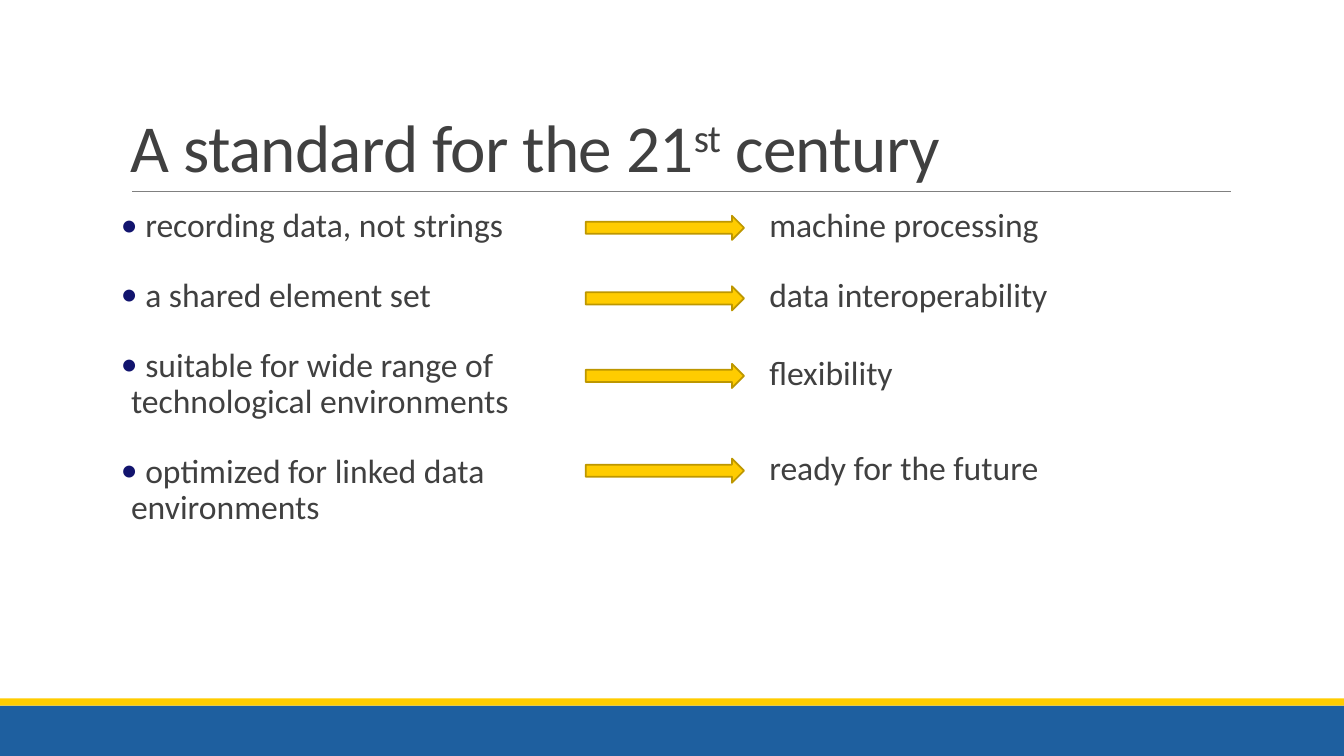
from dataclasses import dataclass

from lxml.etree import SubElement
from pptx import Presentation
from pptx.dml.color import RGBColor
from pptx.enum.shapes import MSO_CONNECTOR as Connector, MSO_SHAPE as Shape
from pptx.enum.text import MSO_ANCHOR as Anchor
from pptx.oxml.ns import qn
from pptx.slide import Slide
from pptx.text.text import TextFrame, _Paragraph as Paragraph
from pptx.util import Inches, Pt

COLORS = {
    "text": "404040",
    "bullet": "12146E",
    "rule": "808080",
    "blue": "1E5F9F",
    "gold": "FFCC00",
    "gold_edge": "BD9700",
}
FONT = "Calibri"


@dataclass
class Benefit:
    feature: str
    outcome: str
    arrow_top: float
    outcome_gap: float  # points after the outcome


BENEFITS = [
    Benefit("recording data, not strings", "machine processing", 2.14, 12),
    Benefit("a shared element set", "data interoperability", 2.84, 18),
    Benefit("suitable for wide range of technological environments",
            "flexibility", 3.61, 30),
    Benefit("optimized for linked data environments",
            "ready for the future", 4.55, 30),
]


def color(name: str) -> RGBColor:
    return RGBColor.from_string(COLORS[name])


def add_run(paragraph: Paragraph, text: str, *, size: float = 24,
            spacing: int = 0, baseline: int = 0) -> None:
    run = paragraph.add_run()
    run.text = text
    run.font.name = FONT
    run.font.size = Pt(size)
    run.font.color.rgb = color("text")
    properties = run.font._element
    if spacing:
        properties.set("spc", str(spacing))
    if baseline:
        properties.set("baseline", str(baseline))


def add_frame(slide: Slide, left: float, top: float, width: float,
              height: float, side_inset: float = 0) -> TextFrame:
    frame = slide.shapes.add_textbox(
        Inches(left), Inches(top), Inches(width), Inches(height)).text_frame
    frame.word_wrap = True
    frame.margin_left = frame.margin_right = Inches(side_inset)
    return frame


def add_column(slide: Slide, left: float, entries: list[tuple[str, float]],
               margin: float, bulleted: bool = False) -> None:
    frame = add_frame(slide, left, 2.02, 5.4, 4.4)
    for index, (text, gap) in enumerate(entries):
        paragraph = frame.add_paragraph() if index else frame.paragraphs[0]
        paragraph.line_spacing = 0.9
        paragraph.space_before = Pt(12)
        paragraph.space_after = Pt(gap)
        properties = paragraph._p.get_or_add_pPr()
        properties.set("marL", str(Inches(margin)))
        if bulleted:
            properties.set("indent", str(-Inches(margin)))
            bullet_color = SubElement(properties, qn("a:buClr"))
            SubElement(bullet_color, qn("a:srgbClr"), val=COLORS["bullet"])
            SubElement(properties, qn("a:buFont"), typeface=FONT)
            SubElement(properties, qn("a:buChar"), char="•")
        add_run(paragraph, text)


def add_block(slide: Slide, kind: Shape, left: float, top: float, width: float,
              height: float, fill: str, edge: str = "") -> None:
    block = slide.shapes.add_shape(
        kind, Inches(left), Inches(top), Inches(width), Inches(height))
    block.shadow.inherit = False
    block.fill.solid()
    block.fill.fore_color.rgb = color(fill)
    if edge:
        block.line.color.rgb = color(edge)
        block.line.width = Pt(1.25)
    else:
        block.line.fill.background()


def main() -> None:
    deck = Presentation()
    deck.slide_width, deck.slide_height = Inches(13.33), Inches(7.5)
    slide = deck.slides.add_slide(deck.slide_layouts[6])

    # Footer bands
    add_block(slide, Shape.RECTANGLE, 0, 7, 13.33, 0.5, "blue")
    add_block(slide, Shape.RECTANGLE, 0, 6.93, 13.33, 0.07, "gold")

    # Title and the rule under it
    title_rule = slide.shapes.add_connector(
        Connector.STRAIGHT, Inches(1.31), Inches(1.9), Inches(12.21), Inches(1.9))
    title_rule.line.color.rgb = color("rule")
    title_rule.line.width = Pt(0.5)
    SubElement(title_rule._element.spPr, qn("a:effectLst"))

    title = add_frame(slide, 1.2, 0.31, 11, 1.59, side_inset=0.1)
    title.vertical_anchor = Anchor.BOTTOM
    heading = title.paragraphs[0]
    heading.line_spacing = 0.85
    for text, baseline in [("A standard for the 21", 0), ("st", 30000),
                           (" century", 0)]:
        add_run(heading, text, size=48, spacing=-50, baseline=baseline)

    # Features on the left, outcomes on the right
    add_column(slide, 1.2, [(f" {b.feature}", 12) for b in BENEFITS],
               margin=0.1, bulleted=True)
    add_column(slide, 6.8, [(b.outcome, b.outcome_gap) for b in BENEFITS],
               margin=0.83)

    # Arrows from feature to outcome
    for benefit in BENEFITS:
        add_block(slide, Shape.RIGHT_ARROW, 5.81, benefit.arrow_top, 1.57, 0.24,
                  "gold", "gold_edge")

    deck.save("out.pptx")


if __name__ == "__main__":
    main()
